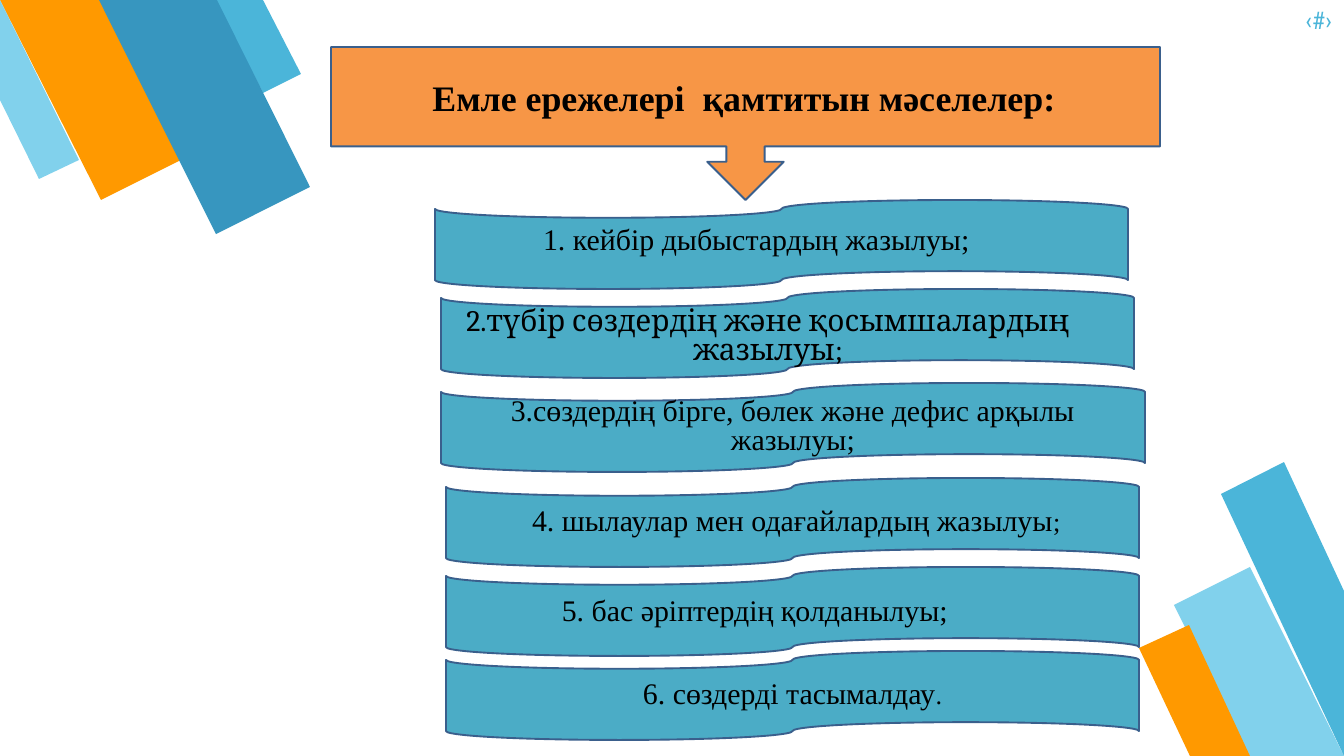
from collections import namedtuple
from dataclasses import dataclass

from pptx import Presentation
from pptx import util as u
from pptx.dml.color import RGBColor
from pptx.enum import shapes, text

EMU_PER_PX = 914400 / 67.2
Box = namedtuple("Box", "x y w h")


@dataclass(frozen=True)
class Theme:
    """Colours, fonts and type sizes of the slide."""

    ink: str = "000000"
    outline: str = "3A5F8C"
    callout: str = "F79646"
    tape: str = "4BACC6"
    orange: str = "FF9900"
    pale: str = "81D1EC"
    sky: str = "4BB5D9"
    deep: str = "3796BF"
    serif: str = "Times New Roman"
    alternate: str = "Cambria"
    condensed: str = "Roboto Condensed"
    heading: float = 38.4
    item: int = 32
    mark: int = 28
    number: int = 26
    heading_leading: float = 53.7
    leading: float = 31.2


THEME = Theme()

LEFT_STRIPES = [
    (THEME.sky, [(263, 0), (216, 0), (263, 93), (301, 74)]),
    (THEME.orange, [(100, 0), (0, 0), (101, 200), (181, 160)]),
    (THEME.deep, [(217, 0), (99, 0), (216, 234), (310, 187)]),
    (THEME.pale, [(39, 179), (79, 160), (0, 0), (0, 100)]),
]
RIGHT_STRIPES = [
    (THEME.pale, [(110, 294), (205, 294), (111, 105), (35, 143)]),
    (THEME.sky, [(145, 0), (82, 32), (205, 294), (205, 129)]),
    (THEME.orange, [(51, 294), (111, 294), (50, 163), (0, 186)]),
]

Rule = namedtuple("Rule", "box runs label font indent", defaults=(None, THEME.serif, 0))
RULES = [
    Rule(Box(435, 200, 693, 89), ["1. кейбір дыбыстардың жазылуы;"],
         Box(27, 15, 568, 53), indent=21),
    Rule(Box(441, 289, 693, 89), ["2.түбір сөздердің және қосымшалардың жазылуы;"],
         Box(5, 32, 644, 32), THEME.alternate),
    Rule(Box(441, 383, 704, 89), ["3.сөздердің бірге, бөлек және дефис арқылы жазылуы;"]),
    Rule(Box(446, 478, 693, 89), [" 4. шылаулар мен одағайлардың жазылуы", ";"]),
    Rule(Box(446, 567, 693, 89), ["5. бас әріптердің қолданылуы;"],
         Box(-89, 21, 796, 49)),
    Rule(Box(446, 651, 693, 89), ["6. сөздерді тасымалдау", "."]),
]


def px(length):
    """Turn pixels into EMU."""
    return u.Emu(round(length * EMU_PER_PX))


def within(outer, inner):
    """Place a box given relative to another."""
    return Box(outer.x + inner.x, outer.y + inner.y, inner.w, inner.h)


def paint(shape, fill, line=None):
    """Give a shape its flat fill and its outline, if any."""
    shape.shadow.inherit = False
    shape.fill.solid()
    shape.fill.fore_color.rgb = RGBColor.from_string(fill)
    if line:
        shape.line.color.rgb = RGBColor.from_string(line)
        shape.line.width = u.Pt(2)
    else:
        shape.line.fill.background()


def write(shape, runs, *, font=THEME.serif, sizes=(THEME.item, THEME.mark),
          color=THEME.ink, bold=False, align=text.PP_ALIGN.CENTER,
          anchor=text.MSO_ANCHOR.MIDDLE, leading=THEME.leading, inset=None, indent=0):
    """Write one formatted paragraph into a shape."""
    frame = shape.text_frame
    frame.word_wrap = True
    frame.auto_size = text.MSO_AUTO_SIZE.NONE
    frame.vertical_anchor = anchor
    if inset is not None:
        frame.margin_left = frame.margin_right = px(inset)
        frame.margin_top = frame.margin_bottom = px(inset)
    paragraph = frame.paragraphs[0]
    paragraph.alignment = align
    paragraph.line_spacing = u.Pt(leading)
    paragraph.space_before = u.Pt(0)
    if indent:
        paragraph._p.get_or_add_pPr().set("marL", str(px(indent)))
    for words, size in zip(runs, sizes):
        run = paragraph.add_run()
        run.text = words
        run.font.name = font
        run.font.size = u.Pt(size)
        run.font.bold = bold
        run.font.color.rgb = RGBColor.from_string(color)


def add_stripes(slide, box, stripes):
    """Draw the slanted stripes of one corner."""
    for color, corners in stripes:
        points = [(box.x + x, box.y + y) for x, y in corners]
        outline = slide.shapes.build_freeform(*points[0], scale=EMU_PER_PX)
        outline.add_line_segments(points[1:], close=True)
        paint(outline.convert_to_shape(), color)


def add_heading(slide, box):
    """Draw the arrow callout with the title in front of it."""
    callout = slide.shapes.add_shape(
        shapes.MSO_SHAPE.DOWN_ARROW_CALLOUT, *map(px, box))
    paint(callout, THEME.callout, THEME.outline)
    title = slide.shapes.title
    title.left, title.top, title.width, title.height = map(
        px, within(box, Box(-47, 22, 920, 51)))
    callout.element.addnext(title.element)
    write(title, ["Емле ережелері  қамтитын мәселелер:"], sizes=[THEME.heading],
          bold=True, anchor=text.MSO_ANCHOR.TOP, leading=THEME.heading_leading, inset=0)


def add_rule(slide, rule):
    """Draw one tape and its wording, inside it or in a label over it."""
    tape = slide.shapes.add_shape(
        shapes.MSO_SHAPE.FLOWCHART_PUNCHED_TAPE, *map(px, rule.box))
    paint(tape, THEME.tape, THEME.outline)
    if rule.label:
        label = slide.shapes.add_textbox(*map(px, within(rule.box, rule.label)))
        write(label, rule.runs, font=rule.font, inset=4, indent=rule.indent)
    else:
        write(tape, rule.runs, font=rule.font)


def add_page_mark(slide, box):
    """Write the page mark in the top corner."""
    mark = slide.shapes.add_textbox(*map(px, box))
    write(mark, ["‹#›"], font=THEME.condensed, sizes=[THEME.number], color=THEME.sky,
          align=text.PP_ALIGN.RIGHT, anchor=text.MSO_ANCHOR.TOP, inset=0)


def main():
    """Build and save the slide."""
    deck = Presentation()
    deck.slide_width, deck.slide_height = px(1344), px(756)
    slide = deck.slides.add_slide(deck.slide_layouts.get_by_name("Title Only"))
    add_stripes(slide, Box(0, 0, 310, 234), LEFT_STRIPES)
    add_stripes(slide, Box(1139, 462, 205, 294), RIGHT_STRIPES)
    add_heading(slide, Box(331, 47, 829, 153))
    for rule in RULES:
        add_rule(slide, rule)
    add_page_mark(slide, Box(1265, 5, 67, 46))
    deck.save("out.pptx")


if __name__ == "__main__":
    main()
